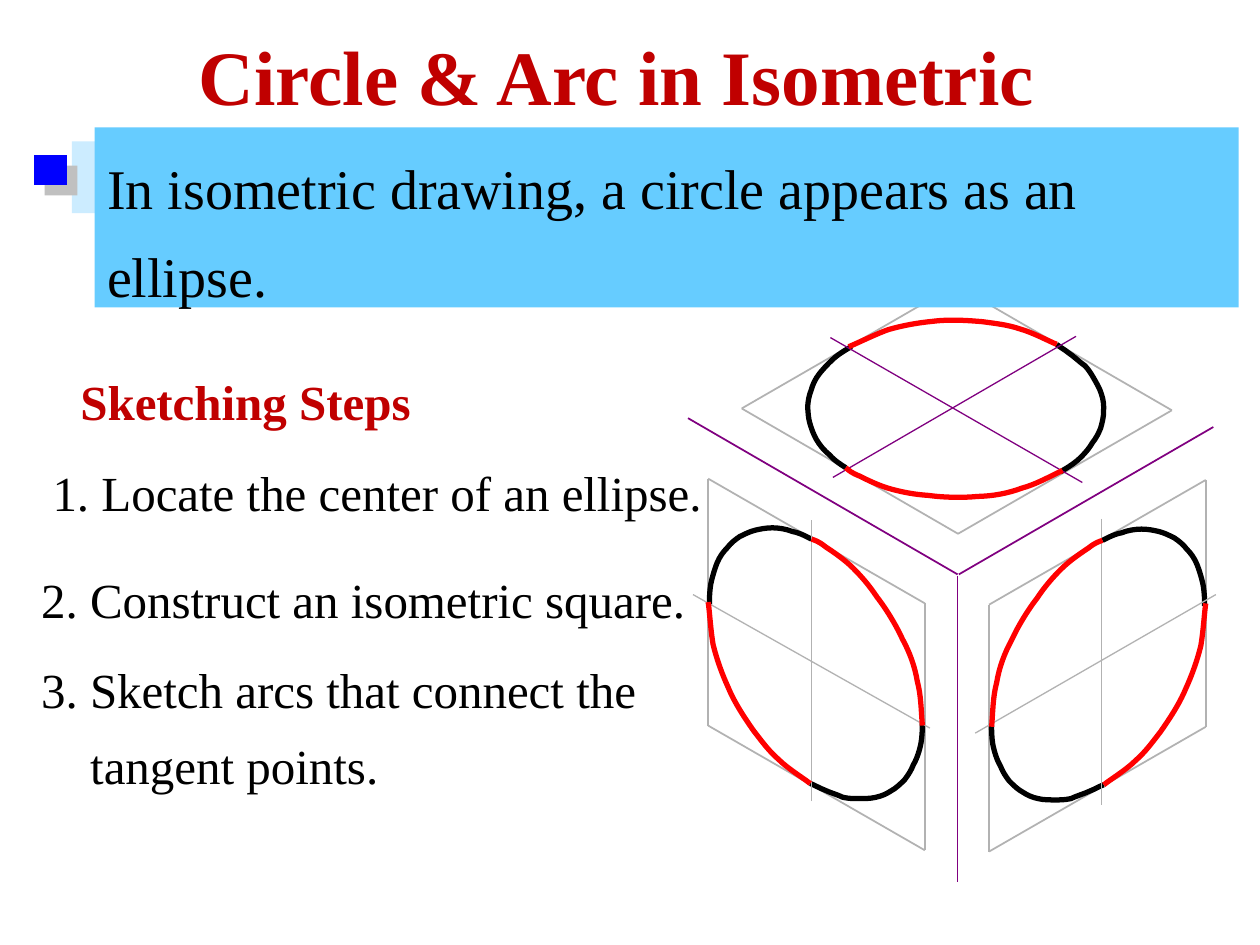
from dataclasses import dataclass
from math import cos, radians, sin

from lxml.etree import SubElement
from pptx import Presentation
from pptx.dml.color import RGBColor
from pptx.enum.shapes import MSO_CONNECTOR, MSO_SHAPE
from pptx.oxml.ns import qn
from pptx.util import Cm, Pt


@dataclass(frozen=True)
class Theme:
    font: str = "Times New Roman"
    heading: str = "C00000"
    body: str = "000000"
    banner: str = "66CCFF"
    strip: str = "CCECFF"
    bullet: str = "0000FF"
    bullet_shadow: str = "C0C0C0"
    guide: str = "B2B2B2"
    axis: str = "800080"
    short_arc: str = "000000"
    long_arc: str = "FF0000"
    title_size: int = 44
    banner_size: int = 32
    step_size: int = 28


@dataclass(frozen=True)
class Box:
    left: int
    top: int
    width: int
    height: int


THEME = Theme()

# Figure geometry, on a grid 419 units wide
GRID_WIDTH = 419
LEFT_SQUARE = [(16, 152), (188, 251), (188, 447), (16, 348)]
# Each arc: start point, then three Bézier points per segment
LEFT_SHORT_ARCS = [
    [(97, 394), (100, 395), (103, 397), (108, 399), (112, 401), (119, 403), (123, 405),
     (128, 406), (131, 406), (135, 406), (140, 406), (145, 406), (149, 405),
     (154, 404), (158, 402), (161, 400), (165, 398), (169, 394), (172, 391),
     (175, 387), (177, 384), (179, 379), (182, 374), (184, 367), (185, 362),
     (186, 356), (186, 351), (186, 346)],
    [(98, 200), (96, 199), (89, 195), (83, 194), (78, 192), (72, 191), (67, 191),
     (62, 191), (57, 192), (53, 193), (49, 194), (45, 196), (41, 198),
     (38, 200), (34, 203), (31, 207), (28, 210), (25, 214), (23, 219),
     (21, 224), (19, 231), (18, 236), (17, 242), (17, 247), (17, 252)],
]
LEFT_LONG_ARCS = [
    [(186, 348), (185, 336), (185, 324), (182, 313), (180, 301), (176, 290), (170, 279),
     (165, 268), (157, 255), (150, 246), (144, 237), (138, 230), (131, 223),
     (124, 216), (115, 210), (109, 206), (104, 202), (101, 201), (98, 200)],
    [(16, 250), (17, 256), (18, 273), (20, 284), (23, 296), (27, 307), (32, 318),
     (37, 330), (45, 342), (52, 352), (59, 361), (64, 368), (72, 375),
     (79, 382), (92, 390), (97, 394)],
]
SIDE_CENTRE_LINES = [((4, 244), (192, 350)), ((98, 408), (98, 185)),
                     ((328, 184), (328, 411)), ((228, 354), (419, 244))]
TOP_CENTRE_LINES = [((313, 155), (113, 40)), ((115, 151), (308, 39))]
AXES = [((214, 229), (214, 472)), ((215, 228), (417, 111)), ((214, 228), (0, 104))]


def on_left(point):
    return point


def on_right(point):
    """Mirror a left-face point onto the right face."""
    x, y = point
    return 427 - x, y + 1


def on_top(point):
    """Turn the right face by 240 degrees onto the top face."""
    x, y = on_right(point)
    dx, dy, turn = x - 325, y - 299.5, radians(240)
    return (212.5 + dx * cos(turn) - dy * sin(turn),
            97.5 + dx * sin(turn) + dy * cos(turn))


FACES = (on_left, on_right, on_top)


def add_line(slide, start, end, color, width):
    line = slide.shapes.add_connector(MSO_CONNECTOR.STRAIGHT, *start, *end)
    line.line.color.rgb = RGBColor.from_string(color)
    line.line.width = Pt(width)
    SubElement(line._element.spPr, qn("a:effectLst"))


def add_curve(slide, points, color):
    builder = slide.shapes.build_freeform(*points[0])
    builder.add_line_segments(points[1:], close=False)
    arc = builder.convert_to_shape()
    arc.shadow.inherit = False
    arc.fill.background()
    arc.line.color.rgb = RGBColor.from_string(color)
    arc.line.width = Pt(3)
    # Join every three straight steps into one Bézier segment
    steps = arc._element.xpath(".//a:lnTo")
    for first in range(0, len(steps), 3):
        curve = steps[first].makeelement(qn("a:cubicBezTo"))
        steps[first].addprevious(curve)
        for step in steps[first:first + 3]:
            curve.append(step[0])
            step.getparent().remove(step)


def add_rect(slide, box, color):
    rect = slide.shapes.add_shape(MSO_SHAPE.RECTANGLE, box.left, box.top, box.width, box.height)
    rect.shadow.inherit = False
    rect.fill.solid()
    rect.fill.fore_color.rgb = RGBColor.from_string(color)
    rect.line.fill.background()
    return rect


def write(frame, text, size, color, bold=False, spacing=None):
    frame.word_wrap = True
    paragraph = frame.paragraphs[0]
    paragraph.text = text
    paragraph.line_spacing = spacing
    font = paragraph.font
    font.name, font.size, font.bold = THEME.font, Pt(size), bold
    font.color.rgb = RGBColor.from_string(color)
    return paragraph


def add_text(slide, box, *args, **kwargs):
    frame = slide.shapes.add_textbox(box.left, box.top, box.width, box.height).text_frame
    return write(frame, *args, **kwargs)


def add_cube(slide, box):
    scale = box.width / GRID_WIDTH

    def place(point):
        return round(box.left + point[0] * scale), round(box.top + point[1] * scale)

    def draw_lines(pairs, color, width):
        for start, end in pairs:
            add_line(slide, place(start), place(end), color, width)

    def draw_arcs(arcs, color):
        for face in FACES:
            for arc in arcs:
                add_curve(slide, [place(face(point)) for point in arc], color)

    for face in FACES:
        corners = [face(corner) for corner in LEFT_SQUARE]
        draw_lines(zip(corners, corners[1:] + corners[:1]), THEME.guide, 1)
    draw_arcs(LEFT_SHORT_ARCS, THEME.short_arc)
    draw_lines(SIDE_CENTRE_LINES, THEME.guide, 0.75)
    draw_lines(TOP_CENTRE_LINES, THEME.axis, 0.75)
    draw_lines(AXES, THEME.axis, 1)
    draw_arcs(LEFT_LONG_ARCS, THEME.long_arc)


def add_banner(slide, box):
    # Pale strip, main panel, then the small square marker
    add_rect(slide, Box(box.left + Cm(0.76), box.top + Cm(0.28), Cm(22.68), Cm(1.45)), THEME.strip)
    panel = add_rect(slide, Box(box.left + Cm(1.22), box.top, box.width - Cm(1.22), box.height),
                     THEME.banner)
    frame = panel.text_frame
    write(frame, "In isometric drawing, a circle appears as an ellipse.",
          THEME.banner_size, THEME.body, spacing=1.3).alignment = 1
    frame.vertical_anchor = 1
    marker = add_rect(slide, Box(box.left, box.top + Cm(0.56), Cm(0.66), Cm(0.6)), THEME.bullet)
    effects = marker._element.spPr.find(qn("a:effectLst"))
    shadow = SubElement(effects, qn("a:outerShdw"), dist=str(Pt(8.5)), dir="2700000")
    SubElement(shadow, qn("a:srgbClr"), val=THEME.bullet_shadow)


def add_steps(slide, box):
    add_text(slide, Box(box.left + Cm(0.79), box.top, Cm(8), Cm(1.45)),
             "Sketching Steps", THEME.step_size, THEME.heading, bold=True)
    steps = [
        (0.23, 1.83, "1. Locate the center of an ellipse.", None),
        (0, 3.99, "2. Construct an isometric square.", None),
        (0, 5.44, "3. Sketch arcs that connect the\vtangent points.", 1.3),
    ]
    for indent, drop, text, spacing in steps:
        step = add_text(slide, Box(box.left + Cm(indent), box.top + Cm(drop), box.width, Cm(1.45)),
                        text, THEME.step_size, THEME.body, spacing=spacing)
        properties = step._p.get_or_add_pPr()
        properties.set("marL", str(Cm(0.99)))
        properties.set("indent", str(-Cm(0.99)))


def main():
    deck = Presentation()
    deck.slide_width, deck.slide_height = Cm(25.4), Cm(19.05)
    slide = deck.slides.add_slide(deck.slide_layouts[6])
    add_cube(slide, Box(Cm(13.87), Cm(5.79), Cm(10.64), Cm(11.99)))
    add_text(slide, Box(Cm(3.76), Cm(0.46), Cm(18), Cm(2.13)),
             "Circle & Arc in Isometric", THEME.title_size, THEME.heading, bold=True)
    add_banner(slide, Box(Cm(0.69), Cm(2.57), Cm(24.28), Cm(3.63)))
    add_steps(slide, Box(Cm(0.58), Cm(7.37), Cm(14.2), Cm(8.66)))
    deck.save("out.pptx")


if __name__ == "__main__":
    main()
